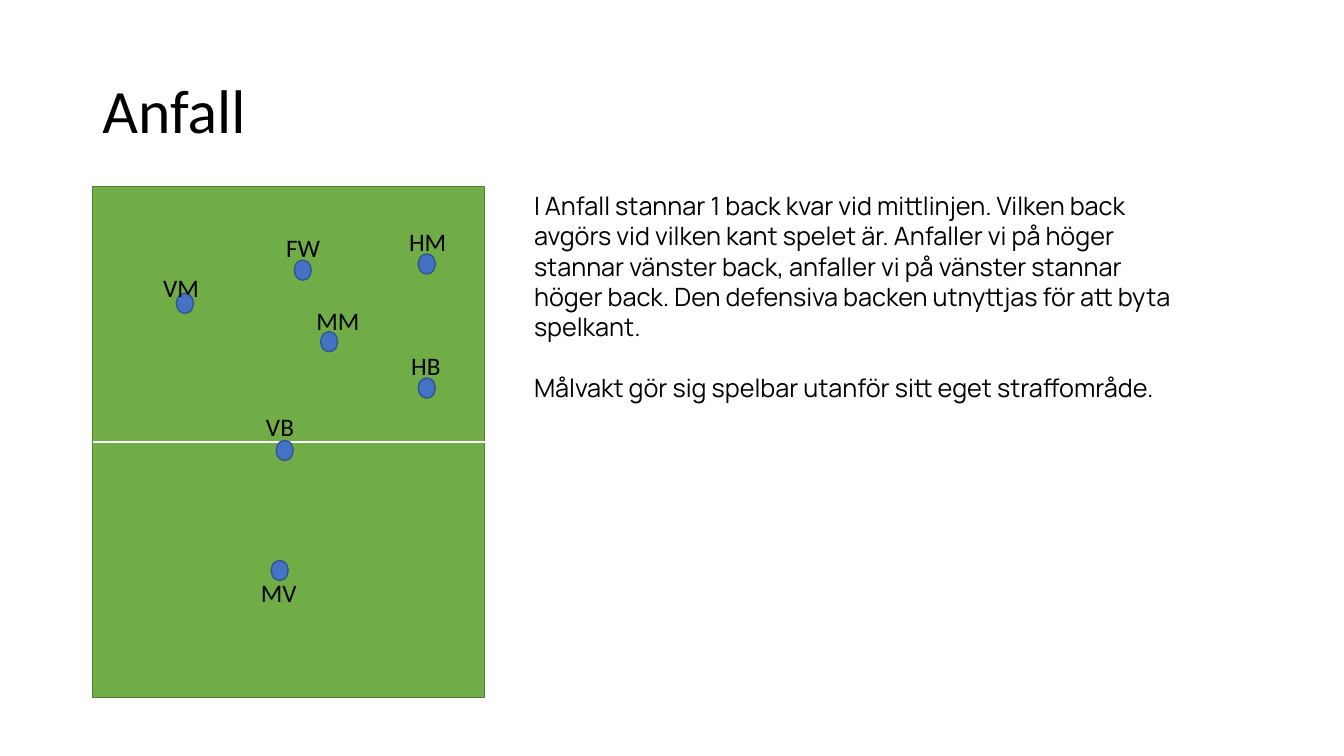
"""Build the slide that shows the attacking formation on a football pitch."""
from lxml.etree import SubElement
from pptx import Presentation
from pptx.dml.color import RGBColor
from pptx.enum.shapes import MSO_CONNECTOR, MSO_SHAPE
from pptx.enum.text import MSO_ANCHOR, MSO_AUTO_SIZE, PP_ALIGN
from pptx.oxml.ns import qn
from pptx.util import Pt

TITLE = "Anfall"
INSTRUCTIONS = [
    "I Anfall stannar 1 back kvar vid mittlinjen. Vilken back avgörs vid vilken kant "
    "spelet är. Anfaller vi på höger stannar vänster back, anfaller vi på vänster "
    "stannar höger back. Den defensiva backen utnyttjas för att byta spelkant.",
    "Målvakt gör sig spelbar utanför sitt eget straffområde.",
]
# Position name, dot left and top, label left, top and width
PLAYERS = [
    ("MV", 193.7, 400.3, 179.3, 409, 40.3),
    ("VB", 197.3, 314.6, 182.9, 290.2, 34.6),
    ("MM", 229, 236.9, 218.9, 214.6, 45.4),
    ("VM", 126, 209.5, 109.4, 190.8, 40.3),
    ("HB", 298.8, 270, 286.6, 247, 36),
    ("HM", 298.8, 181.4, 285.1, 158.4, 41.8),
    ("FW", 210.2, 185.8, 197.3, 162.7, 38.9),
]
PITCH = (66.2, 133.2, 280, 365)
DOT_SIZE = (12.2, 14.4)
LABEL_HEIGHT = 28.8


def color(value):
    return RGBColor.from_string(value)


def write(frame, paragraphs, size=18, font="Calibri", gap=0, line_spacing=None):
    """Fill a text frame with left-aligned paragraphs."""
    for index, text in enumerate(paragraphs):
        paragraph = frame.paragraphs[0] if index == 0 else frame.add_paragraph()
        paragraph.alignment = PP_ALIGN.LEFT
        paragraph.line_spacing = line_spacing
        paragraph.space_before = Pt(gap if index else 0)
        run = paragraph.add_run()
        run.text = text
        run.font.size = Pt(size)
        run.font.name = font
        run.font.color.rgb = color("000000")


def add_filled(slide, kind, box, fill, line):
    """Add a preset shape with a thin outline."""
    shape = slide.shapes.add_shape(kind, *map(Pt, box))
    shape.shadow.inherit = False
    shape.fill.solid()
    shape.fill.fore_color.rgb = color(fill)
    shape.line.color.rgb = color(line)
    shape.line.width = Pt(1)


def add_halfway_line(slide):
    """Draw the white line across the middle of the pitch."""
    left, top, width, height = PITCH
    middle = top + height / 2
    line = slide.shapes.add_connector(
        MSO_CONNECTOR.STRAIGHT, Pt(left), Pt(middle), Pt(left + width), Pt(middle))
    line.line.color.rgb = color("FFFFFF")
    line.line.width = Pt(1.5)
    SubElement(line._element.spPr, qn("a:effectLst"))


def add_text(slide, box, paragraphs, wrap=True, **style):
    """Add a text box."""
    frame = slide.shapes.add_textbox(*map(Pt, box)).text_frame
    frame.word_wrap = wrap
    write(frame, paragraphs, **style)


def main():
    """Create and save the presentation."""
    presentation = Presentation()
    presentation.slide_width, presentation.slide_height = Pt(960), Pt(540)
    slide = presentation.slides.add_slide(presentation.slide_layouts[5])

    title = slide.shapes.title
    title.left, title.top, title.width, title.height = map(Pt, (66, 28.8, 828, 104.4))
    title.text_frame.vertical_anchor = MSO_ANCHOR.MIDDLE
    title.text_frame.auto_size = MSO_AUTO_SIZE.NONE
    write(title.text_frame, [TITLE], size=44, line_spacing=0.9)

    add_filled(slide, MSO_SHAPE.RECTANGLE, PITCH, "70AD47", "538035")
    add_halfway_line(slide)
    for _, left, top, *_ in PLAYERS:
        add_filled(slide, MSO_SHAPE.OVAL, (left, top, *DOT_SIZE), "4472C4", "325491")
    add_text(slide, (374.4, 132.5, 480.2, 225.4), INSTRUCTIONS, font="Manrope", gap=21.6)
    for name, _, _, left, top, width in PLAYERS:
        add_text(slide, (left, top, width, LABEL_HEIGHT), [name], wrap=False)

    presentation.save("out.pptx")


if __name__ == "__main__":
    main()
